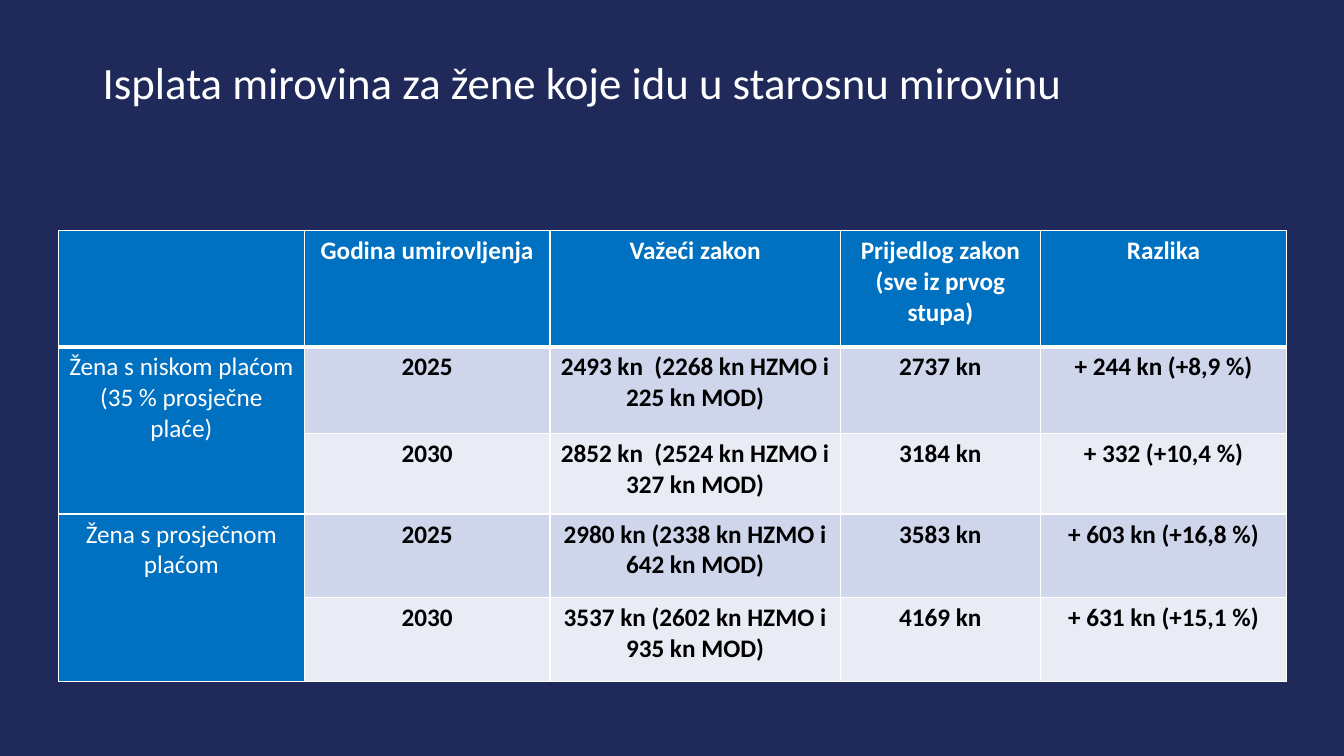
from lxml.etree import SubElement
from pptx import Presentation
from pptx.dml.color import RGBColor
from pptx.enum.text import MSO_ANCHOR, PP_ALIGN
from pptx.oxml.ns import qn
from pptx.util import Inches, Pt

NAVY = RGBColor(0x1F, 0x29, 0x5A)
BLUE = RGBColor(0x00, 0x70, 0xC0)
BAND_DARK = RGBColor(0xCF, 0xD5, 0xEA)
BAND_LIGHT = RGBColor(0xE9, 0xEB, 0xF5)
WHITE = RGBColor(0xFF, 0xFF, 0xFF)
BLACK = RGBColor(0x00, 0x00, 0x00)

TITLE = "Isplata mirovina za žene koje idu u starosnu mirovinu"
COLUMN_WIDTHS = [2.44, 2.44, 2.88, 1.99, 2.44]
ROW_HEIGHTS = [1.15, 0.86, 0.8, 0.83, 0.83]
PENSIONS = [
    ["", "Godina umirovljenja", "Važeći zakon",
     "Prijedlog zakon (sve iz prvog stupa)", "Razlika"],
    ["Žena s niskom plaćom (35 % prosječne plaće)", "2025",
     "2493 kn  (2268 kn HZMO i 225 kn MOD)", "2737 kn", "+ 244 kn (+8,9 %)"],
    ["", "2030", "2852 kn  (2524 kn HZMO i 327 kn MOD)", "3184 kn",
     "+ 332 (+10,4 %)"],
    ["Žena s prosječnom plaćom", "2025",
     "2980 kn (2338 kn HZMO i 642 kn MOD)", "3583 kn", "+ 603 kn (+16,8 %)"],
    ["", "2030", "3537 kn (2602 kn HZMO i 935 kn MOD)", "4169 kn",
     "+ 631 kn (+15,1 %)"],
]


def write(p, text, color, **formats):
    r = p.add_run()
    r.text = text
    r.font.color.rgb = color
    for name, value in {"name": "Calibri", **formats}.items():
        setattr(r.font, name, value)


def set_borders(cell, widths):
    tc_pr = cell._tc.get_or_add_tcPr()
    for side, width in widths.items():
        ln = SubElement(tc_pr, qn(f"a:ln{side}"), w=str(Pt(width)))
        fill = SubElement(ln, qn("a:solidFill"))
        SubElement(fill, qn("a:srgbClr"), val=str(WHITE))


def add_title(slide, left, top, width, height):
    tf = slide.shapes.add_textbox(left, top, width, height).text_frame
    tf.word_wrap = True
    tf.vertical_anchor = MSO_ANCHOR.MIDDLE
    p = tf.paragraphs[0]
    p.line_spacing = 0.9
    write(p, TITLE, WHITE, size=Pt(32))


def style_cell(cell, text, row, col):
    header, label = row == 0, col == 0
    set_borders(cell, {"L": 1, "R": 1, "T": 3 if row == 1 else 1,
                       "B": 3 if header else 1})
    cell.fill.solid()
    band = BAND_DARK if row % 2 else BAND_LIGHT
    cell.fill.fore_color.rgb = BLUE if header or label else band
    p = cell.text_frame.paragraphs[0]
    p.alignment = PP_ALIGN.CENTER
    if text:
        write(p, text, WHITE if header or label else BLACK,
              size=Pt(18), bold=not label)


def add_pension_table(slide, left, top, width, height):
    table = slide.shapes.add_table(len(ROW_HEIGHTS), len(COLUMN_WIDTHS),
                                   left, top, width, height).table
    for column, share in zip(table.columns, COLUMN_WIDTHS):
        column.width = int(width * share / sum(COLUMN_WIDTHS))
    for row, share in zip(table.rows, ROW_HEIGHTS):
        row.height = int(height * share / sum(ROW_HEIGHTS))
    for i, texts in enumerate(PENSIONS):
        for j, text in enumerate(texts):
            style_cell(table.cell(i, j), text, i, j)
    for i in (1, 3):
        table.cell(i, 0).merge(table.cell(i + 1, 0))


def main():
    prs = Presentation()
    prs.slide_width, prs.slide_height = Inches(13.33), Inches(7.5)
    slide = prs.slides.add_slide(prs.slide_layouts[6])
    slide.background.fill.solid()
    slide.background.fill.fore_color.rgb = NAVY
    add_title(slide, Inches(0.92), Inches(0.4), Inches(11.5), Inches(0.89))
    add_pension_table(slide, Inches(0.58), Inches(2.29),
                      Inches(12.18), Inches(4.47))
    prs.save("out.pptx")


if __name__ == "__main__":
    main()
